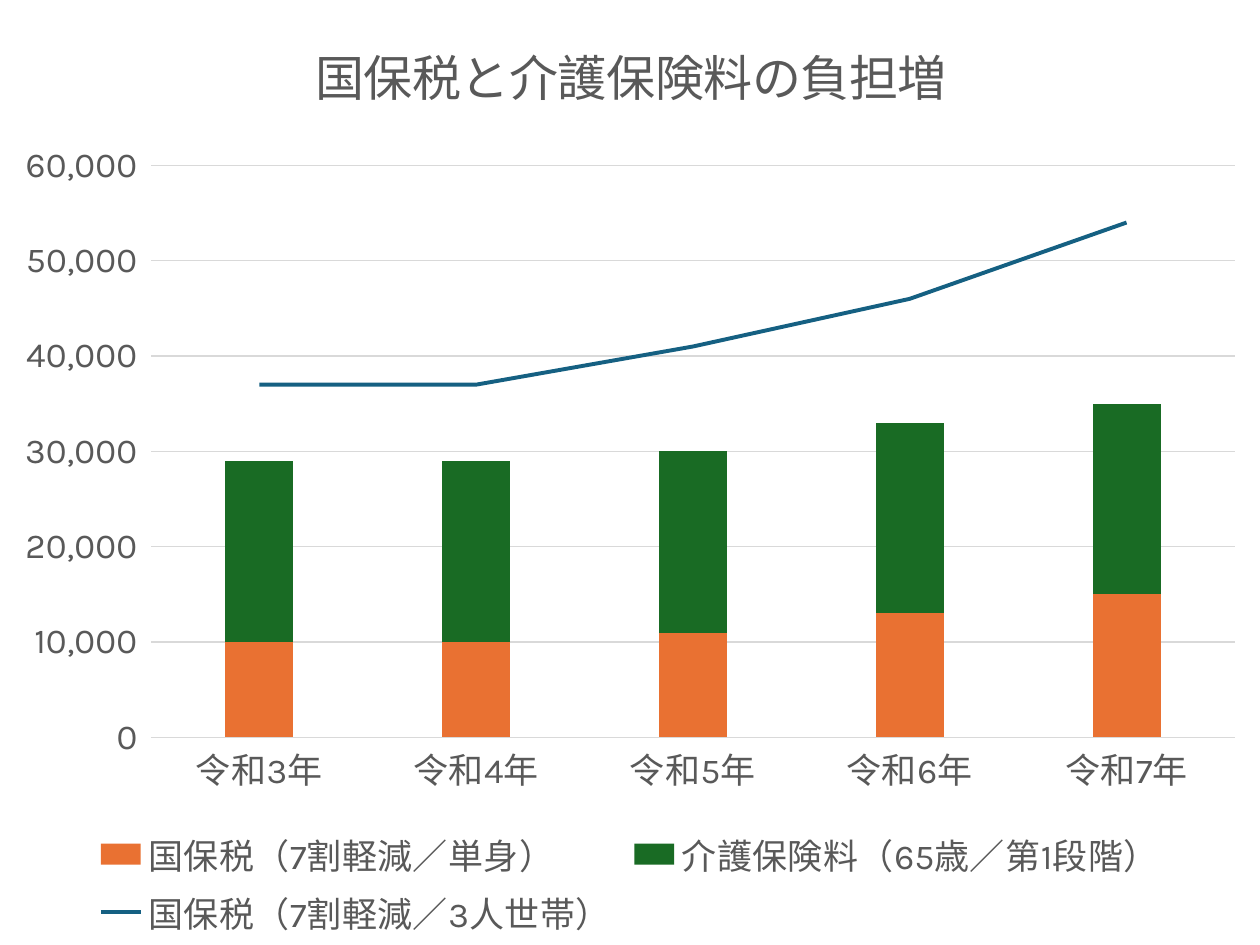
from copy import deepcopy

from lxml import etree
from pptx import Presentation
from pptx.chart.data import CategoryChartData
from pptx.dml.color import RGBColor
from pptx.enum import chart as kinds
from pptx.oxml import ns
from pptx.util import Pt

# Content
TITLE = "国保税と介護保険料の負担増"
YEARS = [f"令和{year}年" for year in range(3, 8)]
COLUMNS = [
    ("国保税（7割軽減／単身）", (10000, 10000, 11000, 13000, 15000)),
    ("介護保険料（65歳／第1段階）", (19000, 19000, 19000, 20000, 20000)),
]
LINE = ("国保税（7割軽減／3人世帯）", (37000, 37000, 41000, 46000, 54000))

THEME = {
    "font": "Karla",
    "title_size": Pt(28),
    "label_size": Pt(20),
    "text": RGBColor.from_string("595959"),
    "grid": RGBColor.from_string("D9D9D9"),
    "columns": [RGBColor.from_string(code) for code in ("E97132", "196B24")],
    "line": RGBColor.from_string("156082"),
}
WIDTH, HEIGHT = Pt(720), Pt(540)
NUMBER_FORMAT = r"#,##0_);[Red]\(#,##0\)"
TITLE_PLACE = {"x": Pt(175), "y": Pt(14.5)}
PLOT_PLACE = {"x": Pt(86.25), "y": Pt(94.5), "w": Pt(619.5), "h": Pt(327)}


def add_element(parent, tag, value=None):
    element = etree.SubElement(parent, ns.qn(f"c:{tag}"))
    if value is not None:
        element.set("val", str(value))
    return element


def set_format(target, values):
    for name, value in values.items():
        setattr(target, name, value)


def set_font(font, size):
    set_format(font, {"name": THEME["font"], "size": size, "bold": False})
    font.color.rgb = THEME["text"]


def set_line(line, color, width):
    line.color.rgb = color
    line.width = width


def place(parent, position, index, inner=False):
    """Give a chart part a fixed place; the file wants fractions."""
    for old in parent.findall(ns.qn("c:layout")):
        parent.remove(old)
    layout = etree.Element(ns.qn("c:layout"))
    manual = add_element(layout, "manualLayout")
    if inner:
        add_element(manual, "layoutTarget", "inner")
    for key in ("x", "y"):
        add_element(manual, f"{key}Mode", "edge")
    for key, length in position.items():
        add_element(manual, key, length / (WIDTH if key in "xw" else HEIGHT))
    parent.insert(index, layout)


def move_last_series_to_line(chart_space):
    """Turn the last column series into a line on the same axes."""
    bars = chart_space.find(f".//{ns.qn('c:barChart')}")
    series = bars.findall(ns.qn("c:ser"))[-1]
    for child in series.findall(ns.qn("c:invertIfNegative")):
        series.remove(child)
    line_chart = etree.Element(ns.qn("c:lineChart"))
    add_element(line_chart, "grouping", "standard")
    add_element(line_chart, "varyColors", 0)
    line_chart.append(series)
    add_element(line_chart, "marker", 1)
    for axis_id in bars.findall(ns.qn("c:axId")):
        line_chart.append(deepcopy(axis_id))
    bars.addnext(line_chart)


def main():
    presentation = Presentation()
    set_format(presentation, {"slide_width": WIDTH, "slide_height": HEIGHT})
    slide = presentation.slides.add_slide(presentation.slide_layouts[6])

    # Chart with its data
    data = CategoryChartData(number_format=NUMBER_FORMAT)
    data.categories = YEARS
    for name, values in COLUMNS + [LINE]:
        data.add_series(name, values)
    chart = slide.shapes.add_chart(
        kinds.XL_CHART_TYPE.COLUMN_STACKED, 0, 0, WIDTH, HEIGHT, data).chart
    set_font(chart.font, THEME["label_size"])
    move_last_series_to_line(chart.element)

    # Columns and line
    columns, lines = chart.plots
    set_format(columns, {"gap_width": 219, "overlap": 100,
                         "vary_by_categories": False})
    for series, color in zip(columns.series, THEME["columns"]):
        series.format.fill.solid()
        series.format.fill.fore_color.rgb = color
    burden = lines.series[0]
    burden.smooth = False
    burden.marker.style = kinds.XL_MARKER_STYLE.NONE
    set_line(burden.format.line, THEME["line"], Pt(2.25))

    # Axes
    years, amounts = chart.category_axis, chart.value_axis
    for axis in (years, amounts):
        set_format(axis, {"major_tick_mark": kinds.XL_TICK_MARK.NONE,
                          "minor_tick_mark": kinds.XL_TICK_MARK.NONE})
        set_font(axis.tick_labels.font, THEME["label_size"])
    set_format(amounts, {"minimum_scale": 0, "maximum_scale": 60000,
                         "major_unit": 10000, "has_major_gridlines": True})
    set_format(amounts.tick_labels, {"number_format": NUMBER_FORMAT,
                                     "number_format_is_linked": False})
    amounts.format.line.fill.background()
    for line in (years.format.line, amounts.major_gridlines.format.line):
        set_line(line, THEME["grid"], Pt(0.75))

    # Title and legend
    chart.has_title = True
    frame = chart.chart_title.text_frame
    frame.text = TITLE
    set_font(frame.paragraphs[0].runs[0].font, THEME["title_size"])
    chart.has_legend = True
    set_format(chart.legend, {"position": kinds.XL_LEGEND_POSITION.BOTTOM,
                              "include_in_layout": False})
    set_font(chart.legend.font, THEME["label_size"])

    # Places of title and plot
    place(chart.element.find(f".//{ns.qn('c:title')}"), TITLE_PLACE, 1)
    place(chart.element.find(f".//{ns.qn('c:plotArea')}"), PLOT_PLACE, 0, True)

    presentation.save("out.pptx")


if __name__ == "__main__":
    main()
